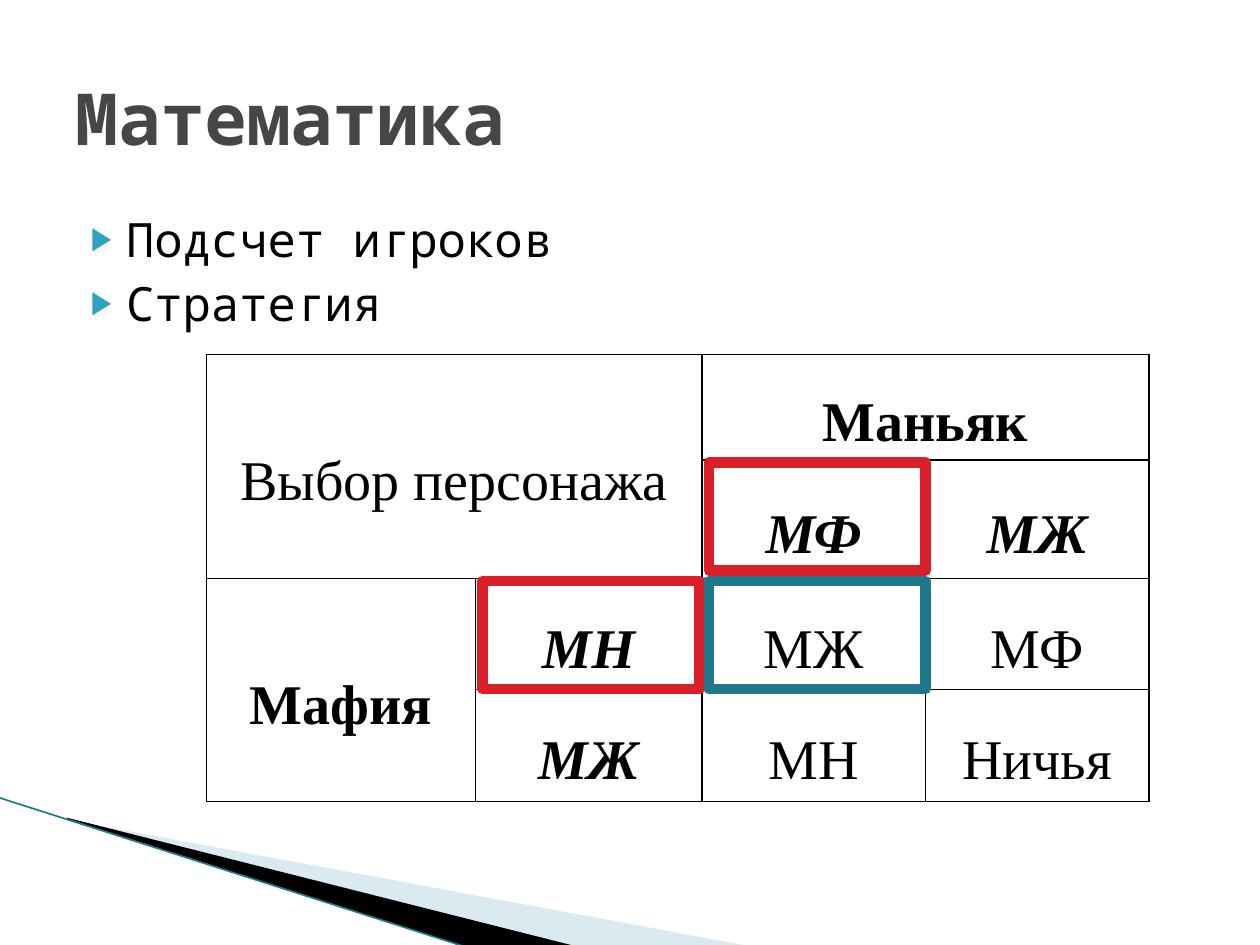
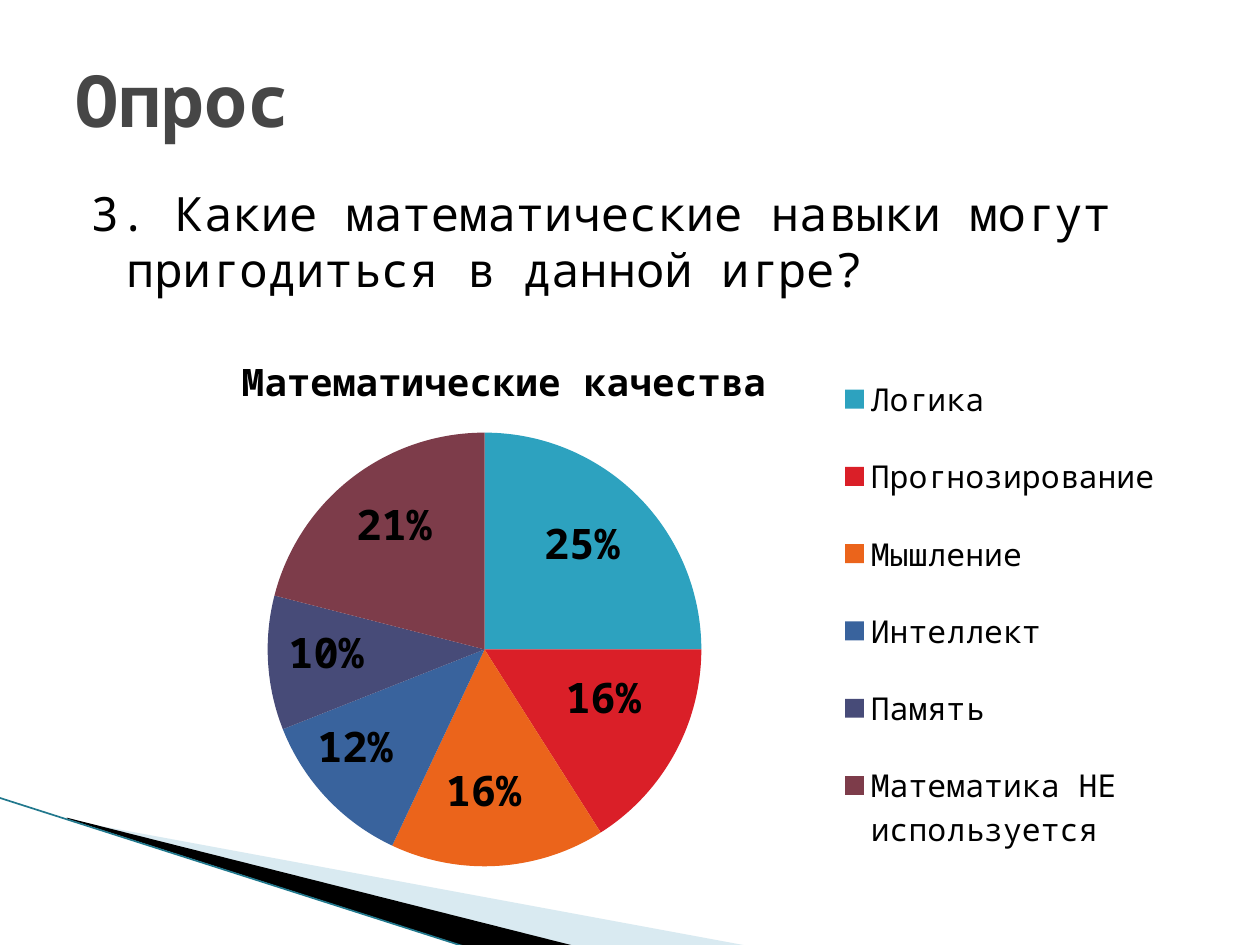
from lxml import etree
from pptx import Presentation
from pptx.chart.data import CategoryChartData
from pptx.dml.color import RGBColor
from pptx.enum.chart import XL_CHART_TYPE as ChartType, XL_LEGEND_POSITION as LegendPosition
from pptx.enum.shapes import MSO_CONNECTOR as Connector, MSO_SHAPE as Preset
from pptx.enum.text import MSO_ANCHOR as Anchor, MSO_AUTO_SIZE as AutoSize, PP_ALIGN as Align
from pptx.oxml.ns import qn
from pptx.util import Inches, Pt

WIDTH, HEIGHT = Inches(10), Inches(7.5)
SANS, SERIF = "Noto Sans Mono", "Times New Roman"
COLORS = {
    "text": "000000",
    "title": "464646",
    "accent": "2DA2BF",
    "pale": "A0CBDC",
    "teal": "21788D",
    "red": "DA1F28",
}
SLICES = [
    ("Логика", 25, "2DA2BF", (42.2, 54.13)),
    ("Прогнозирование", 16, "DA1F28", (43.9, 70.4)),
    ("Мышление", 16, "EB641B", (34.4, 80.27)),
    ("Интеллект", 12, "39639D", (24.2, 75.6)),
    ("Память", 10, "474B78", (21.9, 65.6)),
    ("Математика НЕ используется", 21, "7D3C4A", (27.3, 52.13)),
]
CHOICES = [
    ["Выбор персонажа", "", "Маньяк", ""],
    ["", "", "МФ", "МЖ"],
    ["Мафия", "МН", "МЖ", "МФ"],
    ["", "МЖ", "МН", "Ничья"],
]
MERGES = [((0, 0), (1, 1)), ((0, 2), (0, 3)), ((2, 0), (3, 0))]
BOLD_CELLS = {(0, 2), (2, 0)}
STRATEGY_CELLS = {(1, 2), (1, 3), (2, 1), (3, 1)}


def across(percent):
    return int(WIDTH * percent / 100)


def down(percent):
    return int(HEIGHT * percent / 100)


def area(left, top, width, height):
    return across(left), down(top), across(width), down(height)


def rgb(name):
    return RGBColor.from_string(COLORS.get(name, name))


def style_font(font, size, color="text", name=SANS, bold=False, italic=False):
    font.size = Pt(size)
    font.name = name
    font.bold = bold
    font.italic = italic
    font.color.rgb = rgb(color)


def style_runs(para, *args, **kwargs):
    for span in para.runs:
        style_font(span.font, *args, **kwargs)


def add_child(parent, tag, **attributes):
    return etree.SubElement(parent, qn(tag), attributes)


def move_to(shape, box):
    shape.left, shape.top, shape.width, shape.height = box


def reframe(wedge, box):
    left, top = wedge.left - box[0], wedge.top - box[1]
    outline = wedge.element.find(".//" + qn("a:path"))
    outline.set("w", str(box[2]))
    outline.set("h", str(box[3]))
    for point in outline.iter(qn("a:pt")):
        point.set("x", str(int(point.get("x")) + left))
        point.set("y", str(int(point.get("y")) + top))
    move_to(wedge, box)


def add_wedge(page, box, points, color, opacity=100):
    corners = [(across(x), down(y)) for x, y in points]
    builder = page.shapes.build_freeform(*corners[0], scale=1.0)
    builder.add_line_segments(corners[1:], close=True)
    wedge = builder.convert_to_shape()
    reframe(wedge, box)
    wedge.shadow.inherit = False
    wedge.line.fill.background()
    wedge.fill.solid()
    wedge.fill.fore_color.rgb = rgb(color)
    if opacity < 100:
        shade = wedge.element.find(".//" + qn("a:srgbClr"))
        add_child(shade, "a:alpha", val=str(opacity * 1000))


def add_corner_band(page):
    add_wedge(page, area(7.8, 72.93, 41.6, 21.07),
              [(5.5, 86.8), (59.5, 100.13), (45.6, 100.13), (5.5, 86.67)], "pale", 40)
    add_wedge(page, area(-0.6, 84.4, 41.6, 12.27),
              [(5.3, 86.53), (45.7, 100.13), (37.2, 100.27), (5.4, 86.67)], "text")
    edge = page.shapes.add_connector(
        Connector.STRAIGHT, across(-0.1), down(84.4), across(37.1), down(100.27))
    edge.line.color.rgb = rgb("teal")
    edge.line.width = Pt(0.95)
    add_child(edge.element.spPr, "a:effectLst")


def add_page(deck, heading, heading_top):
    page = deck.slides.add_slide(deck.slide_layouts[1])
    title, body = page.placeholders
    add_corner_band(page)
    for shape in (body, title):
        page.shapes.element.append(shape.element)
    move_to(title, area(5, heading_top, 90, 16.67))
    frame = title.text_frame
    frame.text = heading
    frame.auto_size = AutoSize.NONE
    frame.vertical_anchor = Anchor.MIDDLE
    frame.paragraphs[0].alignment = Align.LEFT
    style_runs(frame.paragraphs[0], 41, "title", bold=True)
    return page, body


def fill_body(body, box, lines, bulleted):
    move_to(body, box)
    frame = body.text_frame
    frame.text = "\n".join(lines)
    frame.auto_size = AutoSize.NONE
    for index, para in enumerate(frame.paragraphs):
        props = para._p.get_or_add_pPr()
        props.set("marL", str(Inches(0.4)))
        props.set("indent", str(Inches(-0.28)))
        if bulleted:
            add_child(add_child(props, "a:buClr"), "a:srgbClr", val=COLORS["accent"])
            add_child(props, "a:buSzPct", val="68000")
            add_child(props, "a:buChar", char="▶")
        else:
            add_child(props, "a:buNone")
        para.space_before = Pt(4 if index else 0)
        style_runs(para, 27)


def add_borders(cell):
    props = cell._tc.get_or_add_tcPr()
    for index, side in enumerate(("a:lnL", "a:lnR", "a:lnT", "a:lnB")):
        line = etree.Element(qn(side), w=str(Pt(1)))
        add_child(add_child(line, "a:solidFill"), "a:srgbClr", val=COLORS["text"])
        props.insert(index, line)


def format_cell(cell, text, bold, italic):
    cell.fill.background()
    add_borders(cell)
    cell.vertical_anchor = Anchor.MIDDLE
    cell.margin_left = cell.margin_right = Inches(0.07)
    cell.margin_top = cell.margin_bottom = 0
    if text:
        cell.text_frame.text = text
        para = cell.text_frame.paragraphs[0]
        para.alignment = Align.CENTER
        para.line_spacing = 1.5
        style_runs(para, 32, name=SERIF, bold=bold, italic=italic)


def add_choice_table(page):
    widths, heights = [21.33, 17.97, 17.75, 17.75], [11.2, 12.5, 11.75, 11.85]
    box = area(16.4, 37.5, sum(widths), sum(heights))
    table = page.shapes.add_table(len(heights), len(widths), *box).table
    for column, width in zip(table.columns, widths):
        column.width = across(width)
    for row, height in zip(table.rows, heights):
        row.height = down(height)
    for start, end in MERGES:
        table.cell(*start).merge(table.cell(*end))
    for row, texts in enumerate(CHOICES):
        for column, text in enumerate(texts):
            spot = (row, column)
            strategy = spot in STRATEGY_CELLS
            format_cell(table.cell(*spot), text, strategy or spot in BOLD_CELLS, strategy)


def add_highlight(page, column, row, color):
    box = area(38.3 + 17.95 * column, 48.93 + 12.54 * row, 17.2, 11.47)
    frame = page.shapes.add_shape(Preset.RECTANGLE, *box)
    frame.shadow.inherit = False
    frame.fill.background()
    frame.line.color.rgb = rgb(color)
    frame.line.width = Pt(6)


def set_layout(parent, index, inner=False, **percents):
    for old in parent.findall(qn("c:layout")):
        parent.remove(old)
    layout = etree.Element(qn("c:layout"))
    manual = add_child(layout, "c:manualLayout")
    if inner:
        add_child(manual, "c:layoutTarget", val="inner")
    add_child(manual, "c:xMode", val="edge")
    add_child(manual, "c:yMode", val="edge")
    for name, percent in percents.items():
        add_child(manual, "c:" + name, val=str(percent / 100))
    parent.insert(index, layout)


def add_skill_chart(page):
    heading = "Математические качества"
    data = CategoryChartData()
    data.categories = [name for name, *_ in SLICES]
    data.add_series(heading, [value for _, value, *_ in SLICES])
    box = area(9.4, 34.4, 85.2, 59.2)
    chart = page.shapes.add_chart(ChartType.PIE, *box, data).chart
    style_font(chart.font, 18)
    chart.has_title = True
    chart.chart_title.text_frame.text = heading
    style_runs(chart.chart_title.text_frame.paragraphs[0], 21.6, bold=True)
    chart.has_legend = True
    chart.legend.position = LegendPosition.RIGHT
    chart.legend.include_in_layout = False
    style_font(chart.legend.font, 18)
    plot = chart.plots[0]
    plot.vary_by_categories = True
    for index, (_, _, color, _) in enumerate(SLICES):
        fill = plot.series[0].points[index].format.fill
        fill.solid()
        fill.fore_color.rgb = rgb(color)
    root = chart.element
    set_layout(root.find(".//" + qn("c:title")), 1, x=10.85, y=3.5)
    set_layout(root.find(".//" + qn("c:plotArea")), 0, inner=True,
               x=13.9, y=19, w=40.4, h=78)
    set_layout(root.find(".//" + qn("c:legend")), 1, x=66.1, y=3.3, w=32, h=96.7)


def add_percent_label(page, value, left, top):
    box = page.shapes.add_textbox(*area(left, top, 8.6, 6.67))
    frame = box.text_frame
    frame.word_wrap = True
    frame.text = f"{value}%"
    style_runs(frame.paragraphs[0], 24, bold=True)


def add_math_page(deck):
    page, body = add_page(deck, "Математика", 4)
    fill_body(body, area(5, 21.6, 90, 66), ["Подсчет игроков", "Стратегия"], True)
    add_choice_table(page)
    for column, row, color in [(1, 0, "red"), (0, 1, "red"), (1, 1, "teal")]:
        add_highlight(page, column, row, color)


def add_survey_page(deck):
    page, body = add_page(deck, "Опрос", 2.13)
    question = "3. Какие математические навыки могут пригодиться в данной игре?"
    fill_body(body, area(5, 18.8, 90, 13.87), [question], False)
    add_skill_chart(page)
    for _, value, _, spot in SLICES:
        add_percent_label(page, value, *spot)


def main():
    deck = Presentation()
    deck.slide_width, deck.slide_height = WIDTH, HEIGHT
    add_math_page(deck)
    add_survey_page(deck)
    deck.save("out.pptx")


if __name__ == "__main__":
    main()
